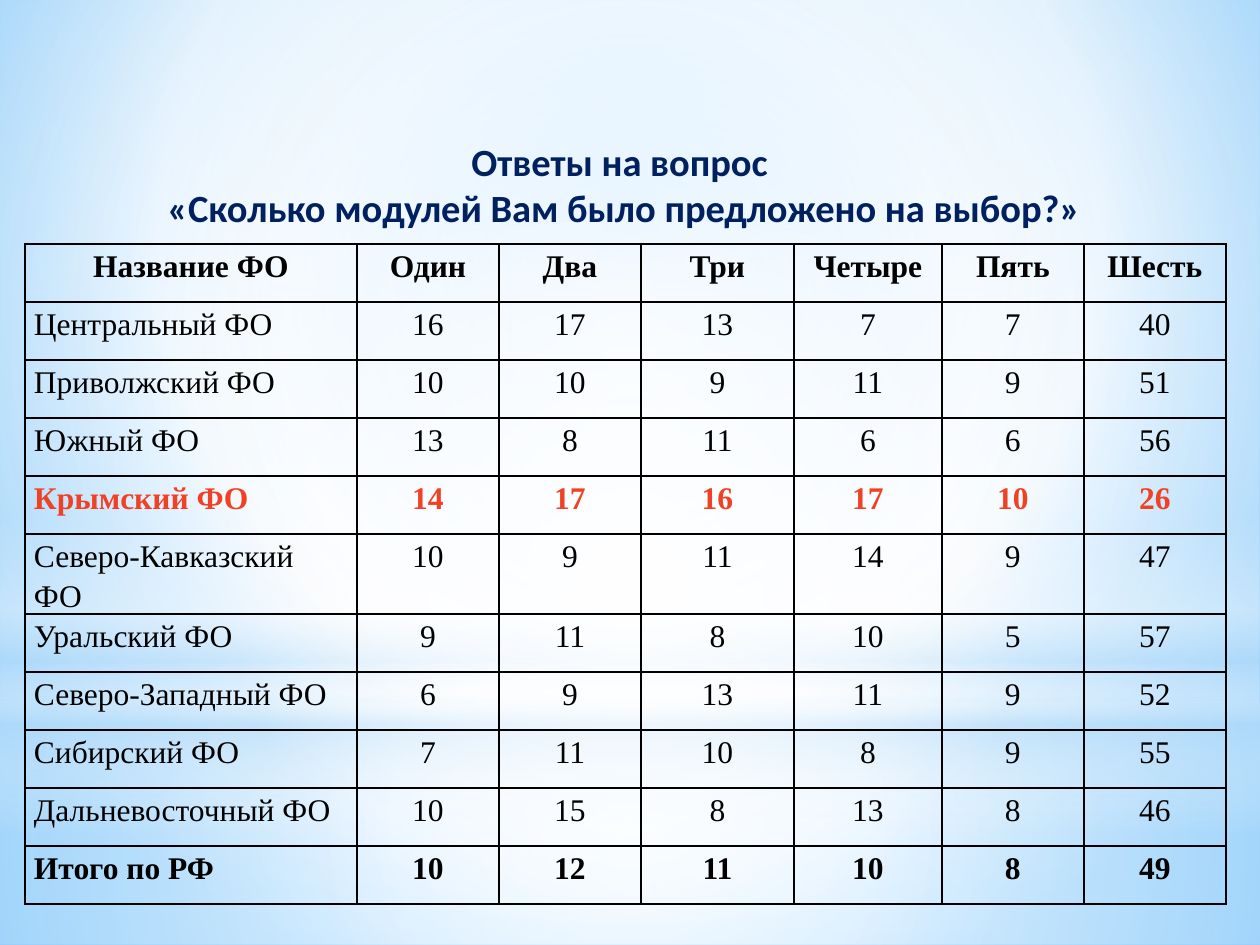
from pptx import Presentation
from pptx.dml.color import RGBColor as Rgb
from pptx.enum.shapes import MSO_SHAPE as Kind
from pptx.enum.text import MSO_ANCHOR as Anchor, MSO_AUTO_SIZE as Auto, PP_ALIGN as Align
from pptx.oxml import parse_xml
from pptx.oxml.ns import nsdecls, qn
from pptx.util import Pt

PX = 914400 / 126
HUE = {
    "ink": "000000", "navy": "002060", "red": "F14124", "white": "FFFFFF",
    "sky": "9ED5FF", "deep": "5BB9FF", "pale": "B4DCFA",
}
MID = (50, 50, 50, 50)
TITLE = ("Ответы на вопрос ", "«Сколько модулей Вам было предложено на выбор?»")
HEAD = ("Название ФО", "Один", "Два", "Три", "Четыре", "Пять", "Шесть")
ROWS = (
    ("Центральный ФО", 16, 17, 13, 7, 7, 40),
    ("Приволжский ФО", 10, 10, 9, 11, 9, 51),
    ("Южный ФО", 13, 8, 11, 6, 6, 56),
    ("Крымский ФО", 14, 17, 16, 17, 10, 26),
    ("Северо-Кавказский ФО", 10, 9, 11, 14, 9, 47),
    ("Уральский ФО", 9, 11, 8, 10, 5, 57),
    ("Северо-Западный ФО", 6, 9, 13, 11, 9, 52),
    ("Сибирский ФО", 7, 11, 10, 8, 9, 55),
    ("Дальневосточный ФО", 10, 15, 8, 13, 8, 46),
    ("Итого по РФ", 10, 12, 11, 10, 8, 49),
)
WIDTHS = (332, 142, 142, 153, 148, 142, 142)
ROW_H = 58


def emu(*px):
    return [round(n * PX) for n in px]


def blend(fill, node, stops, focus=None):
    fill.solid()
    marks = "".join(
        f'<a:gs pos="{pos * 1000}"><a:srgbClr val="{HUE[hue]}">'
        f'<a:alpha val="{alpha * 1000}"/></a:srgbClr></a:gs>'
        for pos, hue, alpha in stops
    )
    if focus:
        sides = " ".join(f'{side}="{n * 1000}"' for side, n in zip("ltrb", focus))
        shade = f'<a:path path="circle"><a:fillToRect {sides}/></a:path>'
    else:
        shade = '<a:lin ang="5400000" scaled="0"/>'
    plain = node.find(qn("a:solidFill"))
    node.replace(plain, parse_xml(
        f'<a:gradFill {nsdecls("a")} rotWithShape="1"><a:gsLst>{marks}</a:gsLst>{shade}</a:gradFill>'
    ))


def veil(slide, box, kind, stops, focus=None):
    shape = slide.shapes.add_shape(kind, *emu(*box))
    shape.shadow.inherit = False
    shape.line.fill.background()
    blend(shape.fill, shape.element.spPr, stops, focus)


def scene(slide, box):
    x, y, w, h = box
    fill = slide.background.fill
    fill.solid()
    blend(fill, slide.element.find(".//" + qn("p:bgPr")),
          ((0, "sky", 100), (60, "white", 100), (100, "deep", 100)), (20, 10, 20, 60))
    split = 703
    veil(slide, (x, y + split, w, h - split), Kind.RECTANGLE,
         ((0, "white", 91), (37, "white", 76), (100, "pale", 79)), MID)
    veil(slide, (x, y, w, split), Kind.RECTANGLE,
         ((0, "white", 89), (48, "white", 62), (100, "pale", 79)), MID)
    veil(slide, (x, y + 519, w, 315), Kind.RECTANGLE,
         ((0, "white", 0), (29, "white", 30), (45, "pale", 40),
          (55, "white", 26), (65, "pale", 60), (100, "white", 0)))
    veil(slide, (x, y + 220, w, split), Kind.OVAL,
         ((0, "white", 100), (56, "white", 0)), MID)


def write(para, text, face, size, hue, bold, align):
    para.alignment = align
    run = para.add_run()
    run.text = text
    font = run.font
    font.name, font.size, font.bold = face, Pt(size), bold
    font.color.rgb = Rgb.from_string(HUE[hue])


def edge(cell):
    props = cell._tc.get_or_add_tcPr()
    for at, side in enumerate(("lnL", "lnR", "lnT", "lnB")):
        props.insert(at, parse_xml(
            f'<a:{side} {nsdecls("a")} w="12700"><a:solidFill>'
            f'<a:srgbClr val="{HUE["ink"]}"/></a:solidFill></a:{side}>'
        ))


def grid(slide, box):
    data = (HEAD, *ROWS)
    table = slide.shapes.add_table(len(data), len(HEAD), *emu(*box)).table
    table.first_row = table.horz_banding = False
    for col, width in zip(table.columns, emu(*WIDTHS)):
        col.width = width
    for r, (row, items) in enumerate(zip(table.rows, data)):
        row.height = emu(ROW_H)[0]
        hot = items[0] == "Крымский ФО"
        bold = hot or r in (0, len(data) - 1)
        for c, (cell, item) in enumerate(zip(row.cells, items)):
            cell.fill.background()
            edge(cell)
            cell.margin_left = cell.margin_right = emu(9)[0]
            cell.margin_top = cell.margin_bottom = 0
            para = cell.text_frame.paragraphs[0]
            para.line_spacing = 1.15
            align = Align.JUSTIFY if r and not c else Align.CENTER
            write(para, str(item), "Times New Roman", 18, "red" if hot else "ink", bold, align)


def title(slide, box):
    shape = slide.shapes.title
    shape.left, shape.top, shape.width, shape.height = emu(*box)
    frame = shape.text_frame
    frame.word_wrap = True
    frame.auto_size = Auto.SHAPE_TO_FIT_TEXT
    frame.vertical_anchor = Anchor.MIDDLE
    for i, line in enumerate(TITLE):
        para = frame.add_paragraph() if i else frame.paragraphs[0]
        write(para, line, "Calibri", 22, "navy", True, Align.CENTER)
    slide.shapes._spTree.append(shape.element)


def main():
    deck = Presentation()
    deck.slide_width, deck.slide_height = emu(1260, 945)
    slide = deck.slides.add_slide(deck.slide_layouts[5])
    scene(slide, (0, 0, 1260, 945))
    grid(slide, (25, 244, sum(WIDTHS), ROW_H * (len(ROWS) + 1)))
    title(slide, (44, 131, 1160, 106))
    deck.save("out.pptx")


if __name__ == "__main__":
    main()
